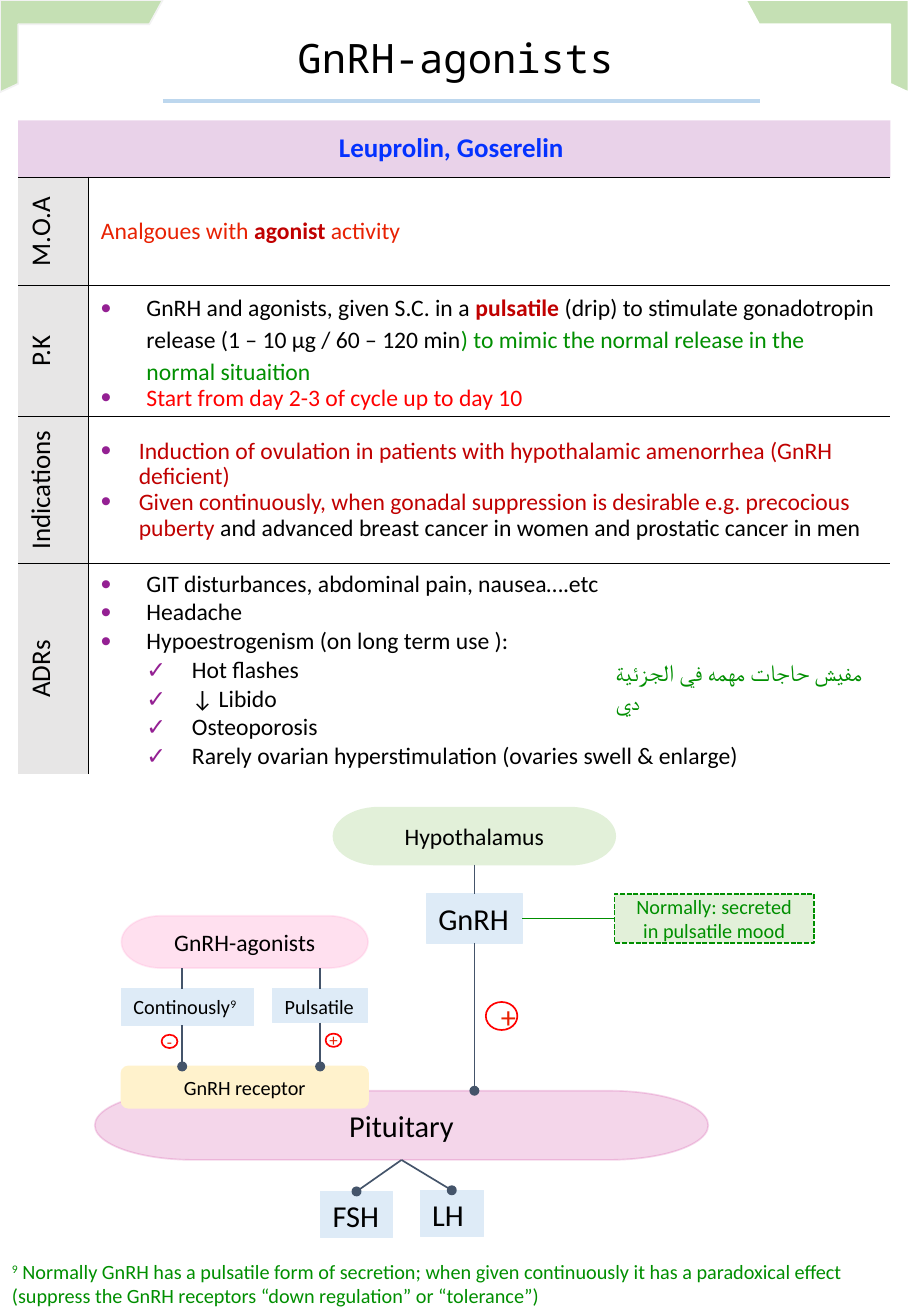
from lxml import etree
from pptx import Presentation
from pptx.dml.color import RGBColor
from pptx.enum import dml, shapes, text
from pptx.oxml import ns
from pptx.util import Pt

# ---- Content: a run is (text, colour, bold, superscript), the last three optional
BLACK, GREEN, RED, CRIMSON, SCARLET = "000000", "008F00", "FF0000", "C00000", "E82102"
SLATE, PALE_BLUE, PALE_GREEN, GREY, PURPLE = "44546A", "DEEBF7", "E2F0D9", "E7E6E6", "942093"
SLIDE_SIZE = (540, 780.13)
TITLE = "GnRH-agonists"
TITLE_BOX = (63.4, 15.8, 413.3, 36)
TITLE_RULE = ((96.5, 59.8), (450.7, 59.8))
CORNER = [(0, 0), (0, 54.7), (10.8, 49.7), (10.8, 14.4), (88.6, 14.4), (96.5, 0)]
CORNER_RIGHT = 538.6

# Paragraph styles: left indent, hanging indent, line spacing, bullet, bullet size in %
STYLES = {
    "loose": (27, 27, 1.1, "•", 125),
    "tight": (27, 27, 0.9, "•", 125),
    "narrow": (22.5, 22.5, 0.9, "•", 125),
    "bullet": (27, 27, None, "•", 125),
    "check": (54, 27, None, "✓", 100),
}
TABLE_BOX = (10.8, 71.3, 517, 387.4)
COLUMNS = (41.8, 475.2)
HEADER = ("Leuprolin, Goserelin ", 33.8)
ROWS = [  # label, height, paragraphs as (style, runs)
    ("M.O.A", 64.1, [
        (None, [("Analgoues with ", SCARLET), ("agonist", CRIMSON, True), (" activity", SCARLET)])]),
    ("P.K", 77.8, [
        ("loose", [("GnRH and agonists, given S.C. in a ",), ("pulsatile", CRIMSON, True),
                   (" (drip) to stimulate gonadotropin release (1 – 10 µg / 60 – 120 min",),
                   (") to mimic the normal release in the normal situaition", GREEN)]),
        ("tight", [("Start from day 2-3 of cycle up to day 10", RED)])]),
    ("Indications ", 87.1, [
        ("narrow", [("Induction of ovulation in patients with hypothalamic amenorrhea "
                     "(GnRH deficient)", CRIMSON)]),
        ("narrow", [("Given continuously, when gonadal suppression is desirable e.g. "
                     "precocious puberty", CRIMSON),
                    (" and advanced breast cancer in women and prostatic cancer in men",)])]),
    ("ADRs", 124.6, [
        ("bullet", [("GIT disturbances, abdominal pain, nausea….etc",)]),
        ("bullet", [("Headache",)]),
        ("bullet", [("Hypoestrogenism (on long term use ):",)]),
        ("check", [("Hot flashes",)]),
        ("check", [("↓ Libido",)]),
        ("check", [("Osteoporosis",)]),
        ("check", [("Rarely ovarian hyperstimulation (ovaries swell & enlarge)",)])]),
]

# Diagram: name, preset, box, fill, line, runs, text size ("CC3399@20" is 20 % opaque)
PILL, BOX, OVAL = "FLOWCHART_TERMINATOR", "RECTANGLE", "OVAL"
NODES = [
    ("hypothalamus", PILL, (197.7, 478.8, 167, 33.8), PALE_GREEN, PALE_GREEN,
     [("Hypothalamus",)], 14),
    ("pituitary", PILL, (56.2, 646.6, 363.6, 41), "CC3399@20", "CC3399@20", [("Pituitary",)], 18),
    ("big plus", OVAL, (288, 594, 18.7, 16.6), "FFFFFF", RED, [("+", SCARLET)], 18),
    ("receptor", "ROUNDED_RECTANGLE", (72, 632.2, 146.2, 24.5), "FFF2CC", "FFF2CC",
     [("GnRH receptor",)], 12),
    ("agonists", PILL, (72, 542.9, 146.2, 31), "FF99CC@30", "FF99CC@20", [("GnRH-agonists",)], 14),
    ("small plus", OVAL, (193, 612.7, 9.4, 7.9), "FFFFFF", RED, [("+", SCARLET)], 10),
    ("small minus", OVAL, (95.8, 613.4, 9.4, 7.9), "FFFFFF", RED, [("-", SCARLET)], 10),
    ("note", BOX, (364.3, 529.9, 118.1, 29.1), PALE_GREEN, GREEN,
     [("Normally: secreted in pulsatile mood", GREEN)], 12),
]
LABELS = [  # pale blue tags: name, box, runs, text size
    ("gnrh", (252.75, 529.9, 56.9, 29.1), [("GnRH",)], 18),
    ("pulsatile", (161.7, 586.1, 56.2, 20.2), [("Pulsatile",)], 12),
    ("continuous", (72, 586.1, 78.5, 21.8), [("Continously",), ("9", BLACK, False, True)], 12),
    ("fsh", (190.1, 706.3, 42.5, 27.4), [("FSH",)], 18),
    ("lh", (249.1, 705.6, 37.4, 27.4), [("LH",)], 18),
]
# Each end is a point or (node name, side); then colour and whether it ends in a dot
TOP, LEFT, BOTTOM, RIGHT = range(4)
LINKS = [
    (("hypothalamus", BOTTOM), ("gnrh", TOP), SLATE, False),
    (("gnrh", BOTTOM), (281.2, 646.6), SLATE, True),
    (("gnrh", RIGHT), ("note", LEFT), GREEN, False),
    ((189.8, 573.9), ("pulsatile", TOP), SLATE, False),
    (("pulsatile", BOTTOM), (189.8, 632.2), SLATE, True),
    ((108, 573.9), (108, 586.1), SLATE, False),
    ((108, 607.9), (108, 632.2), SLATE, True),
    (("pituitary", BOTTOM), ("fsh", TOP), SLATE, True),
    (("pituitary", BOTTOM), ("lh", TOP), SLATE, True),
]
REMARK = ((357.8, 386.6, 170, 24.5), [("مفيش حاجات مهمه في الجزئية دي", GREEN)], 14)
FOOTNOTE = ((0, 743, 538.6, 36), [
    ("9", GREEN, False, True),
    (" Normally GnRH has a pulsatile form of secretion; when given continuously it has a "
     "paradoxical effect (suppress the GnRH receptors “down regulation” or “tolerance”)", GREEN)], 12)


# ---- Helpers
def points(values):
    return [Pt(value) for value in values]


def sub(parent, tag, **attributes):
    return etree.SubElement(parent, ns.qn("a:" + tag), attributes)


def paint(fill, parent, colour):
    rgb, _, opacity = colour.partition("@")
    fill.solid()
    fill.fore_color.rgb = RGBColor.from_string(rgb)
    if opacity:
        sub(parent.find(ns.qn("a:solidFill"))[0], "alpha", val=opacity + "000")


def style_shape(shape, fill, line, width=1):
    properties = shape.element.spPr
    shape.shadow.inherit = False
    paint(shape.fill, properties, fill)
    shape.line.width = Pt(width)
    paint(shape.line.fill, properties.find(ns.qn("a:ln")), line)


def write(paragraph, runs, size, align=None, style=None, font="Calibri"):
    if style:
        left, hang, spacing, bullet, bullet_size = STYLES[style]
        properties = paragraph._p.get_or_add_pPr()
        properties.set("marL", str(Pt(left)))
        properties.set("indent", str(-Pt(hang)))
        sub(sub(properties, "buClr"), "srgbClr", val=PURPLE)
        sub(properties, "buSzPct", val=f"{bullet_size}000")
        sub(properties, "buFont", typeface="Arial")
        sub(properties, "buChar", char=bullet)
        paragraph.line_spacing = spacing
    paragraph.alignment = align
    for content, *extras in runs:
        colour, bold, raised = (*extras, *(BLACK, False, False)[len(extras):])
        run = paragraph.add_run()
        run.text = content
        run.font.name, run.font.size, run.font.bold = font, Pt(size), bold
        run.font.color.rgb = RGBColor.from_string(colour)
        properties = run._r.get_or_add_rPr()
        sub(properties, "cs", typeface=font)
        if raised:
            properties.set("baseline", "30000")


def add_text(slide, box, runs, size, **options):
    frame = slide.shapes.add_textbox(*points(box)).text_frame
    frame.word_wrap = True
    write(frame.paragraphs[0], runs, size, **options)


def add_line(slide, start, end, colour, width, dot=False, nodes=None):
    joins = [isinstance(place[0], str) for place in (start, end)]
    ends = [(0, 0) if joined else place for joined, place in zip(joins, (start, end))]
    line = slide.shapes.add_connector(shapes.MSO_CONNECTOR.STRAIGHT, *points(ends[0] + ends[1]))
    for joined, connect, place in zip(joins, (line.begin_connect, line.end_connect), (start, end)):
        if joined:
            connect(nodes[place[0]], place[1])
    line.line.width = Pt(width)
    line.line.color.rgb = RGBColor.from_string(colour)
    properties = line.element.spPr
    if dot:
        sub(properties.find(ns.qn("a:ln")), "tailEnd", type="oval")
    sub(properties, "effectLst")


def style_cell(cell, edges, fill=None):
    properties = cell._tc.get_or_add_tcPr()
    for side in "LRTB":
        border = sub(properties, "ln" + side, w=str(Pt(1)))
        if side in edges:
            sub(sub(border, "solidFill"), "srgbClr", val=BLACK)
        else:
            sub(border, "noFill")
    cell.vertical_anchor = text.MSO_ANCHOR.MIDDLE
    if fill:
        paint(cell.fill, properties, fill)
    else:
        cell.fill.background()


# ---- Slide parts
CENTER = text.PP_ALIGN.CENTER


def add_drug_table(slide):
    table = slide.shapes.add_table(len(ROWS) + 1, 2, *points(TABLE_BOX)).table
    table.first_row = table.horz_banding = False
    for column, width in zip(table.columns, COLUMNS):
        column.width = Pt(width)
    for row, height in zip(table.rows, [HEADER[1]] + [row[1] for row in ROWS]):
        row.height = Pt(height)
    header = table.cell(0, 0)
    header.merge(table.cell(0, 1))
    for column in range(2):
        style_cell(table.cell(0, column), "B", PURPLE + "@20")
    write(header.text_frame.paragraphs[0], [(HEADER[0], "0432FF", True)], 16, CENTER)
    for number, (label, _, paragraphs) in enumerate(ROWS, 1):
        edges = "T" if number == len(ROWS) else "TB"
        heading, body = table.cell(number, 0), table.cell(number, 1)
        style_cell(heading, edges + "R", GREY)
        heading._tc.get_or_add_tcPr().set("vert", "vert270")
        write(heading.text_frame.paragraphs[0], [(label,)], 16, CENTER)
        style_cell(body, edges + "L")
        frame = body.text_frame
        for index, (style, runs) in enumerate(paragraphs):
            paragraph = frame.add_paragraph() if index else frame.paragraphs[0]
            write(paragraph, runs, 14, style=style)


def add_diagram(slide):
    nodes = {}
    tags = [(name, BOX, box, PALE_BLUE, PALE_BLUE, runs, size) for name, box, runs, size in LABELS]
    for name, preset, box, fill, line, runs, size in NODES + tags:
        is_tag = fill == PALE_BLUE
        shape = slide.shapes.add_shape(getattr(shapes.MSO_SHAPE, preset), *points(box))
        style_shape(shape, fill, line, 0.75 if is_tag else 1)
        frame = shape.text_frame
        frame.word_wrap = not is_tag
        frame.vertical_anchor = text.MSO_ANCHOR.TOP if is_tag else text.MSO_ANCHOR.MIDDLE
        write(frame.paragraphs[0], runs, size, text.PP_ALIGN.LEFT if is_tag else CENTER)
        nodes[name] = shape
    nodes["note"].line.dash_style = dml.MSO_LINE.SQUARE_DOT
    for start, end, colour, dot in LINKS:
        add_line(slide, start, end, colour, 1, dot, nodes)


def main():
    presentation = Presentation()
    presentation.slide_width, presentation.slide_height = points(SLIDE_SIZE)
    slide = presentation.slides.add_slide(presentation.slide_layouts[6])
    # Heading and mirrored corners
    add_line(slide, *TITLE_RULE, "BDD7EE", 2.25)
    add_text(slide, TITLE_BOX, [(TITLE,)], 24, align=CENTER, font="Noto Sans Mono")
    for outline, edge in ((CORNER, "F2F2F2"), ([(CORNER_RIGHT - x, y) for x, y in CORNER], "FFFFFF")):
        first, *others = [points(place) for place in outline]
        builder = slide.shapes.build_freeform(*first)
        builder.add_line_segments(others, close=True)
        style_shape(builder.convert_to_shape(), "C5E0B4", edge)
    # Body
    add_drug_table(slide)
    add_diagram(slide)
    for box, runs, size in (REMARK, FOOTNOTE):
        add_text(slide, box, runs, size)
    presentation.save("out.pptx")


if __name__ == "__main__":
    main()
